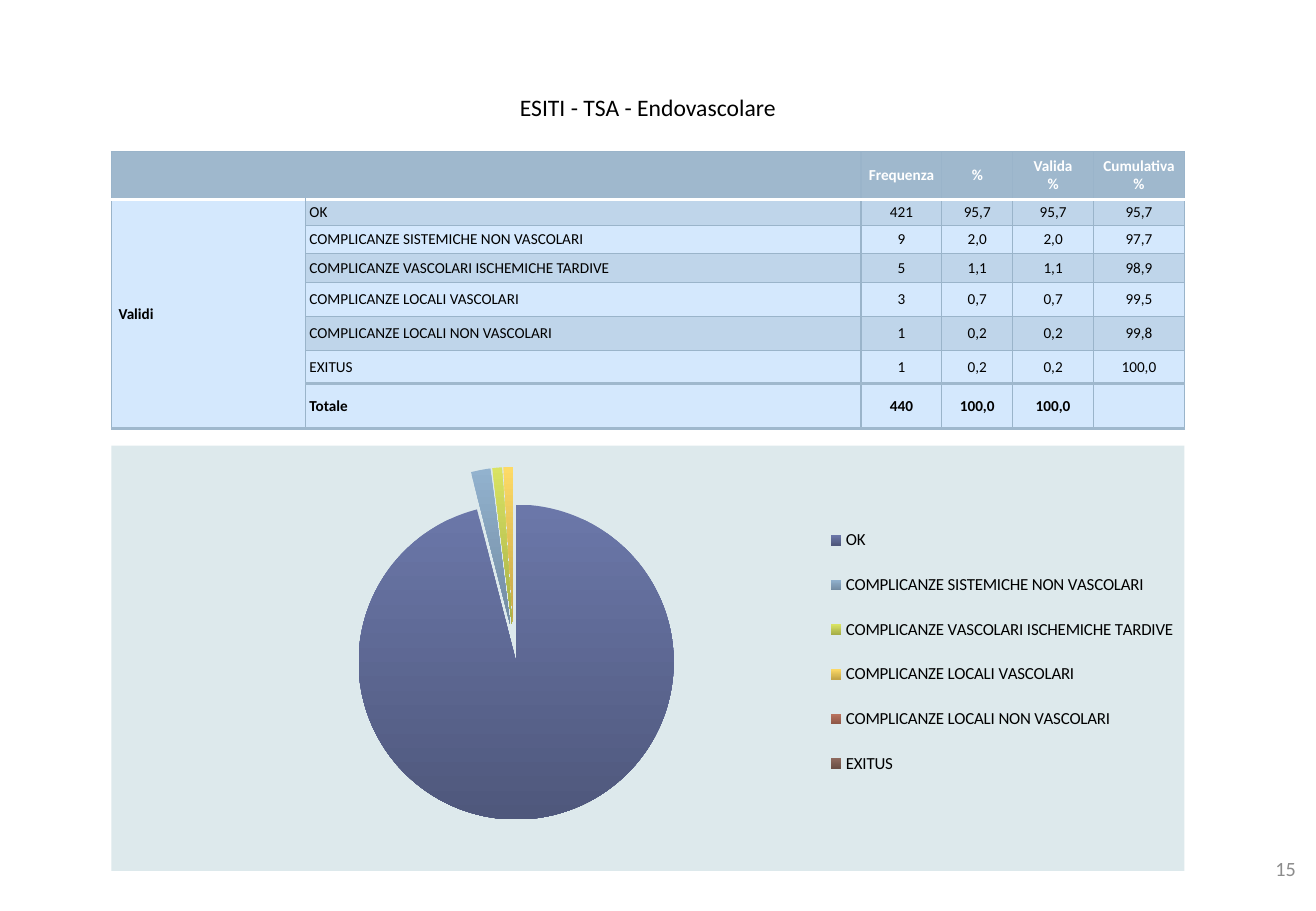
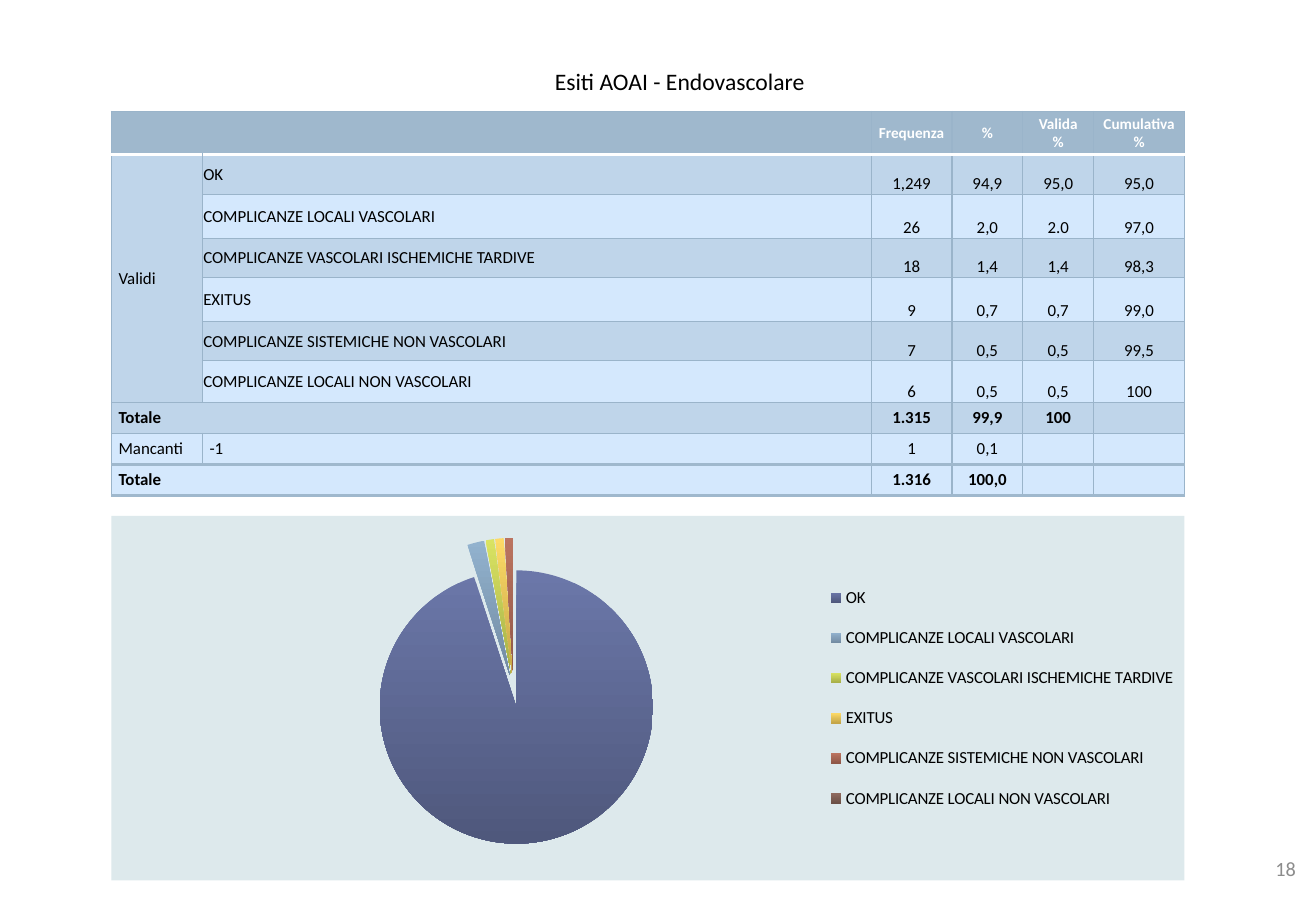
"""Build two outcome slides, each with a frequency table and an exploded pie chart."""
from dataclasses import dataclass

from lxml import etree
from pptx import Presentation
from pptx import oxml
from pptx.chart import data as chart_data
from pptx.dml import color as dml
from pptx.enum import chart as chart_enum, text
from pptx.oxml import ns
from pptx.util import Cm, Pt


@dataclass(frozen=True)
class Theme:
    font: str = "Calibri"
    title_size: int = 14
    number_size: int = 12
    header_size: int = 9
    legend_size: int = 10
    ink: str = "000000"
    muted: str = "8C8C8C"
    white: str = "FFFFFF"
    header: str = "9FB8CD"
    grid: str = "9AB4CA"
    band: str = "BFD5EA"
    base: str = "D4E8FD"
    panel: str = "DDE9EC"
    slices: tuple = (
        ("6B77A9", "4F587C"), ("92B2CE", "728BA2"), ("D9E362", "A6AE48"),
        ("FDDA66", "C4A548"), ("BB7460", "8F5747"), ("8E6A5E", "6B4F46"),
    )


THEME = Theme()
LEFT, WIDTH = 2.33, 22.43
NUMBER_WIDTHS = (1.69, 1.48, 1.9)
EXPLOSION = 12
HEADER = ["", "", "Frequenza", "%", "Valida\n%", "Cumulativa\n%"]
LEFT_ALIGN, CENTER, RIGHT = text.PP_ALIGN.LEFT, text.PP_ALIGN.CENTER, text.PP_ALIGN.RIGHT
MIDDLE, BOTTOM = text.MSO_ANCHOR.MIDDLE, text.MSO_ANCHOR.BOTTOM

SLIDES = [
    {
        "number": "15",
        "title": "ESITI - TSA - Endovascolare",
        "title_box": (2.33, 1.73, 22.43, 1.02),
        "table_top": 3.17,
        "stub_width": 4.06,
        "valid_width": 1.69,
        "heights": (1.0, 0.54, 0.59, 0.6, 0.71, 0.71, 0.7, 0.94),
        "size": 9,
        "stub_bold": True,
        "anchor": MIDDLE,
        "margins": (0.08, 0.08, 0.08),
        "total_margins": (0.08, 0.08, 0.08),
        "merges": [(0, 0, 0, 1), (1, 0, 7, 0)],
        "chart_box": (9.32, 8.89),
        "pie_values": (96, 2, 1, 1, 0, 0),
        "plot": (0, 0.05, 0.75, 0.83),
        "legend": (0.66, 0.14, 0.34, 0.69),
        "rows": [
            ["Validi", "OK", "421", "95,7", "95,7", "95,7"],
            ["", "COMPLICANZE SISTEMICHE NON VASCOLARI", "9", "2,0", "2,0", "97,7"],
            ["", "COMPLICANZE VASCOLARI ISCHEMICHE TARDIVE", "5", "1,1", "1,1", "98,9"],
            ["", "COMPLICANZE LOCALI VASCOLARI", "3", "0,7", "0,7", "99,5"],
            ["", "COMPLICANZE LOCALI NON VASCOLARI", "1", "0,2", "0,2", "99,8"],
            ["", "EXITUS", "1", "0,2", "0,2", "100,0"],
            ["", "Totale", "440", "100,0", "100,0", ""],
        ],
    },
    {
        "number": "18",
        "title": "Esiti AOAI - Endovascolare",
        "title_box": (1.83, 1.19, 24.76, 1.02),
        "table_top": 2.33,
        "stub_width": 1.9,
        "valid_width": 1.48,
        "heights": (0.91, 0.82, 0.92, 0.82, 0.92, 0.82, 0.87, 0.65, 0.65, 0.65),
        "size": 10,
        "stub_bold": False,
        "anchor": BOTTOM,
        "margins": (0.02, 0.02, 0),
        "total_margins": (0.15, 0, 0),
        "merges": [(0, 0, 0, 1), (1, 0, 6, 0), (7, 0, 7, 1), (9, 0, 9, 1)],
        "chart_box": (10.79, 7.62),
        "pie_values": (95, 2, 1, 1, 1, 0),
        "plot": (0, 0.06, 0.75, 0.84),
        "legend": (0.66, 0.14, 0.34, 0.72),
        "rows": [
            ["Validi", "OK", "1,249", "94,9", "95,0", "95,0"],
            ["", "COMPLICANZE LOCALI VASCOLARI", "26", "2,0", "2.0", "97,0"],
            ["", "COMPLICANZE VASCOLARI ISCHEMICHE TARDIVE", "18", "1,4", "1,4", "98,3"],
            ["", "EXITUS", "9", "0,7", "0,7", "99,0"],
            ["", "COMPLICANZE SISTEMICHE NON VASCOLARI", "7", "0,5", "0,5", "99,5"],
            ["", "COMPLICANZE LOCALI NON VASCOLARI", "6", "0,5", "0,5", "100"],
            ["Totale", "", "1.315", "99,9", "100", ""],
            ["Mancanti", "-1", "1", "0,1", "", ""],
            ["Totale", "", "1.316", "100,0", "", ""],
        ],
    },
]


def write(frame, words, size, color, align, bold=False):
    frame.text = words
    frame.word_wrap = True
    for paragraph in frame.paragraphs:
        paragraph.alignment = align
        paragraph.font.name = THEME.font
        paragraph.font.size = Pt(size)
        paragraph.font.bold = bold
        paragraph.font.color.rgb = dml.RGBColor.from_string(color)


def manual_layout(box, inner=False):
    target = '<c:layoutTarget val="inner"/>' if inner else ""
    modes = '<c:xMode val="edge"/><c:yMode val="edge"/>'
    sizes = "".join(f'<c:{name} val="{value}"/>' for name, value in zip("xywh", box))
    return oxml.parse_xml(
        f'<c:layout {ns.nsdecls("c")}><c:manualLayout>{target}{modes}{sizes}'
        "</c:manualLayout></c:layout>")


presentation = Presentation()
presentation.slide_width = Cm(27.51)
presentation.slide_height = Cm(19.05)

for content in SLIDES:
    slide = presentation.slides.add_slide(presentation.slide_layouts[5])

    title = slide.shapes.title
    title.left, title.top, title.width, title.height = map(Cm, content["title_box"])
    title.text_frame.vertical_anchor = MIDDLE
    title.text_frame.auto_size = text.MSO_AUTO_SIZE.NONE
    write(title.text_frame, content["title"], THEME.title_size, THEME.ink, CENTER)

    page_number = slide.shapes.add_textbox(Cm(25.1), Cm(17.65), Cm(2.24), Cm(1.02))
    page_number.text_frame.vertical_anchor = MIDDLE
    write(page_number.text_frame, content["number"], THEME.number_size, THEME.muted, RIGHT)

    rows = [HEADER] + content["rows"]
    last = len(rows) - 1
    frequency, percent, cumulative = NUMBER_WIDTHS
    numbers = (frequency, percent, content["valid_width"], cumulative)
    label_width = WIDTH - content["stub_width"] - sum(numbers)
    table = slide.shapes.add_table(
        len(rows), len(HEADER), Cm(LEFT), Cm(content["table_top"]),
        Cm(WIDTH), Cm(sum(content["heights"]))).table
    table.horz_banding = False
    for column, width in zip(table.columns, (content["stub_width"], label_width, *numbers)):
        column.width = Cm(width)
    for row, height in zip(table.rows, content["heights"]):
        row.height = Cm(height)
    for top, left, bottom, right in content["merges"]:
        table.cell(top, left).merge(table.cell(bottom, right))

    edges = [(THEME.grid, 0.75)] * (last + 2)
    edges[1] = (THEME.white, 2)
    edges[last] = edges[last + 1] = (THEME.header, 2)

    for row_index, values in enumerate(rows):
        is_header = row_index == 0
        is_outcome = 1 <= row_index <= len(THEME.slices)
        for column_index, words in enumerate(values):
            cell = table.cell(row_index, column_index)
            is_stub = is_outcome and column_index == 0
            size, color, fill = content["size"], THEME.ink, THEME.base
            bold = "Totale" in values or (is_stub and content["stub_bold"])
            margins = content["margins"] if is_outcome else content["total_margins"]
            if is_header:
                size, color, fill, bold = THEME.header_size, THEME.white, THEME.header, True
                margins = (0.02, 0, 0)
            elif is_stub:
                margins = (0.15, 0, 0)
            if row_index % 2 and row_index != last and not (is_stub and content["stub_bold"]):
                fill = THEME.band
            cell.margin_left = cell.margin_right = Cm(margins[0])
            cell.margin_top, cell.margin_bottom = Cm(margins[1]), Cm(margins[2])
            is_number = column_index >= 2
            cell.vertical_anchor = content["anchor"] if is_outcome and is_number else MIDDLE
            write(cell.text_frame, words, size, color, CENTER if is_number else LEFT_ALIGN, bold)
            if not cell.is_spanned:
                span = cell.span_height if cell.is_merge_origin else 1
                borders = {"L": edges[0], "R": edges[0],
                           "T": edges[row_index], "B": edges[row_index + span]}
                properties = cell._tc.get_or_add_tcPr()
                for side, (line_color, line_width) in borders.items():
                    properties.append(oxml.parse_xml(
                        f'<a:ln{side} {ns.nsdecls("a")} w="{Pt(line_width)}"><a:solidFill>'
                        f'<a:srgbClr val="{line_color}"/></a:solidFill></a:ln{side}>'))
            cell.fill.solid()
            cell.fill.fore_color.rgb = dml.RGBColor.from_string(fill)

    pie_data = chart_data.CategoryChartData()
    pie_data.categories = [row[1] for row in content["rows"][:len(THEME.slices)]]
    pie_data.add_series("Series 1", content["pie_values"])
    chart_top, chart_height = content["chart_box"]
    chart = slide.shapes.add_chart(
        chart_enum.XL_CHART_TYPE.PIE, Cm(LEFT), Cm(chart_top),
        Cm(WIDTH), Cm(chart_height), pie_data).chart
    chart.has_title = False
    chart.font.name = THEME.font
    chart.font.size = Pt(THEME.legend_size)
    chart.font.color.rgb = dml.RGBColor.from_string(THEME.ink)
    chart.has_legend = True
    chart.legend.position = chart_enum.XL_LEGEND_POSITION.RIGHT
    chart.legend.include_in_layout = False
    chart.legend.font.size = Pt(THEME.legend_size)

    pie = chart.plots[0]
    pie.vary_by_categories = True
    series = pie.series[0]
    for index, colors in enumerate(THEME.slices):
        fill = series.points[index].format.fill
        fill.gradient()
        fill.gradient_angle = 270
        for stop, color in zip(fill.gradient_stops, colors):
            stop.color.rgb = dml.RGBColor.from_string(color)
    explosion = etree.Element(ns.qn("c:explosion"), val=str(EXPLOSION))
    series._element.find(ns.qn("c:tx")).addnext(explosion)

    chart_part = chart._chartSpace.find(ns.qn("c:chart"))
    plot_area = chart_part.find(ns.qn("c:plotArea"))
    legend = chart_part.find(ns.qn("c:legend"))
    for parent in (plot_area, legend):
        for layout in parent.findall(ns.qn("c:layout")):
            parent.remove(layout)
    plot_area.insert(0, manual_layout(content["plot"], inner=True))
    legend.find(ns.qn("c:legendPos")).addnext(manual_layout(content["legend"]))
    chart_part.addnext(oxml.parse_xml(
        f'<c:spPr {ns.nsdecls("c", "a")}><a:solidFill><a:srgbClr val="{THEME.panel}"/>'
        "</a:solidFill><a:ln><a:noFill/></a:ln></c:spPr>"))

presentation.save("out.pptx")
